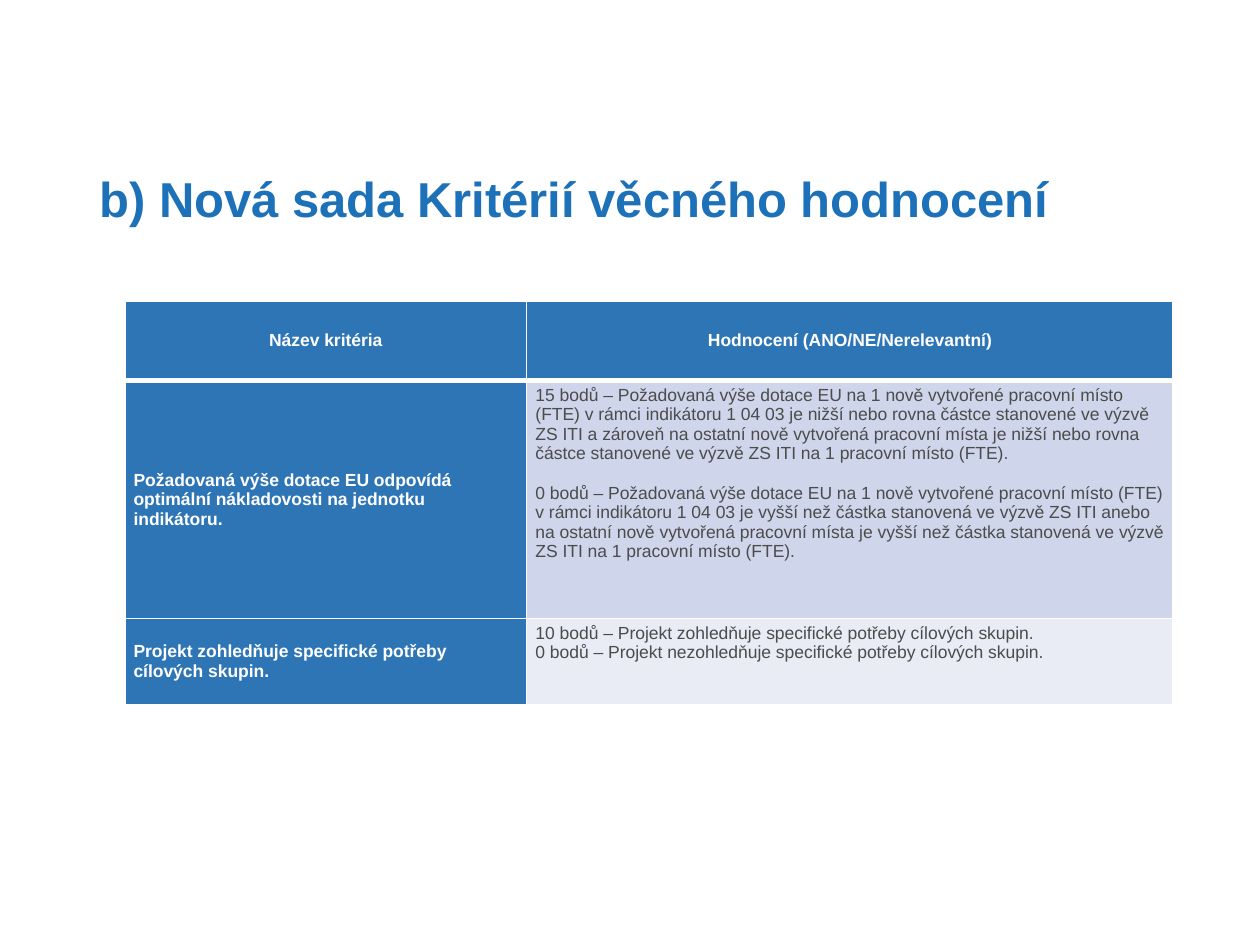
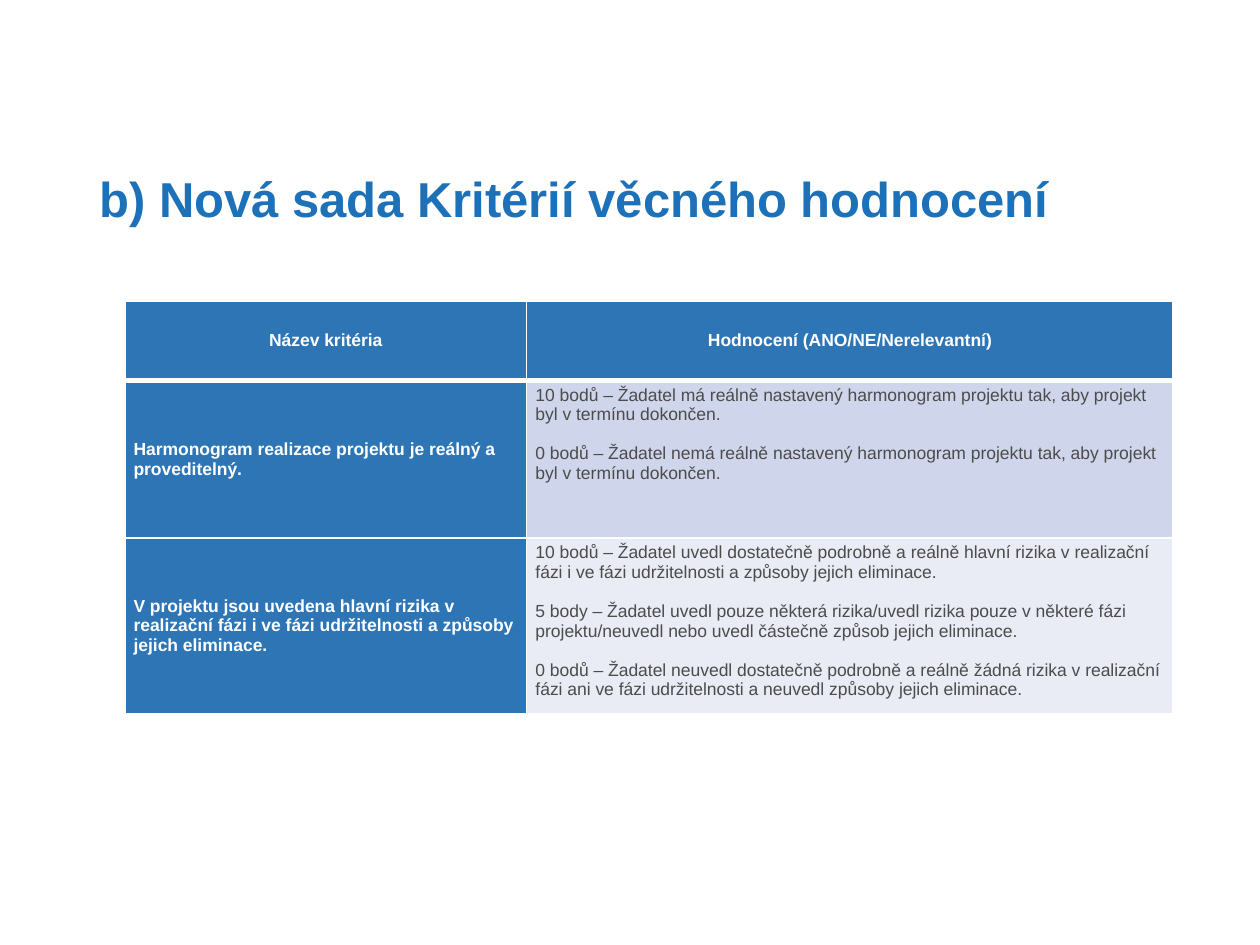
"""Builds two slides with tables of project evaluation criteria."""
from lxml import etree
from pptx import Presentation
from pptx.dml.color import RGBColor
from pptx.enum.text import MSO_ANCHOR, PP_ALIGN
from pptx.oxml.ns import qn
from pptx.util import Inches, Pt

MIDDLE, TOP = MSO_ANCHOR.MIDDLE, MSO_ANCHOR.TOP
CENTER, LEFT = PP_ALIGN.CENTER, PP_ALIGN.LEFT
FONT = "Arial"
COLORS = {"title": "1D71B8", "head": "2E75B6", "odd": "CFD5EA",
          "even": "E9EBF5", "text": "4C4C4C", "white": "FFFFFF"}
TITLE = "b) Nová sada Kritérií věcného hodnocení"
HEADS = ("Název kritéria", ["Hodnocení (ANO/NE/Nerelevantní)"])
WIDTHS = (3.19, 5.13)
GAP = 11.2

SLIDES = [
    [(0.63, 0, *HEADS),
     (1.89, GAP, "Požadovaná výše dotace EU odpovídá optimální nákladovosti na jednotku indikátoru.", [
         "15 bodů – Požadovaná výše dotace EU na 1 nově vytvořené pracovní místo (FTE) v rámci indikátoru 1 04 03 je nižší nebo rovna částce stanovené ve výzvě ZS ITI a zároveň na ostatní nově vytvořená pracovní místa je nižší nebo rovna částce stanovené ve výzvě ZS ITI na 1 pracovní místo (FTE).",
         "0 bodů – Požadovaná výše dotace EU na 1 nově vytvořené pracovní místo (FTE) v rámci indikátoru 1 04 03 je vyšší než částka stanovená ve výzvě ZS ITI anebo na ostatní nově vytvořená pracovní místa je vyšší než částka stanovená ve výzvě ZS ITI na 1 pracovní místo (FTE)."]),
     (0.68, 0, "Projekt zohledňuje specifické potřeby cílových skupin.", [
         "10 bodů – Projekt zohledňuje specifické potřeby cílových skupin.",
         "0 bodů – Projekt nezohledňuje specifické potřeby cílových skupin."])],
    [(0.63, 0, *HEADS),
     (1.25, GAP, "Harmonogram realizace projektu je reálný a proveditelný.", [
         "10 bodů – Žadatel má reálně nastavený harmonogram projektu tak, aby projekt byl v termínu dokončen.",
         "0 bodů – Žadatel nemá reálně nastavený harmonogram projektu tak, aby projekt byl v termínu dokončen."]),
     (1.32, GAP, "V projektu jsou uvedena hlavní rizika v realizační fázi i ve fázi udržitelnosti a způsoby jejich eliminace.", [
         "10 bodů – Žadatel uvedl dostatečně podrobně a reálně hlavní rizika v realizační fázi i ve fázi udržitelnosti a způsoby jejich eliminace.",
         "5 body – Žadatel uvedl pouze některá rizika/uvedl rizika pouze v některé fázi projektu/neuvedl nebo uvedl částečně způsob jejich eliminace.",
         "0 bodů – Žadatel neuvedl dostatečně podrobně a reálně žádná rizika v realizační fázi ani ve fázi udržitelnosti a neuvedl způsoby jejich eliminace."])],
]


def add_run(para, text, size, color, bold):
    run = para.add_run()
    run.text = text
    run.font.name = FONT
    run.font.size = Pt(size)
    run.font.bold = bold
    run.font.color.rgb = RGBColor.from_string(COLORS[color])


def add_edges(cell, row):
    props = cell._tc.get_or_add_tcPr()
    for side in ("L", "R", "T", "B"):
        thick = (row, side) in ((0, "B"), (1, "T"))
        line = etree.SubElement(props, qn(f"a:ln{side}"), w=str(Pt(3 if thick else 1)))
        fill = etree.SubElement(line, qn("a:solidFill"))
        etree.SubElement(fill, qn("a:srgbClr"), val=COLORS["white"])


prs = Presentation()
prs.slide_width, prs.slide_height = Inches(10), Inches(7.5)

for rows in SLIDES:
    slide = prs.slides.add_slide(prs.slide_layouts[6])
    box = slide.shapes.add_textbox(Inches(0.69), Inches(0.8), Inches(8.6), Inches(1.6))
    frame = box.text_frame
    frame.word_wrap = True
    frame.vertical_anchor = MIDDLE
    frame.paragraphs[0].line_spacing = 0.9
    add_run(frame.paragraphs[0], TITLE, 28, "title", True)

    high = sum(row[0] for row in rows)
    table = slide.shapes.add_table(len(rows), len(WIDTHS), Inches(0.99), Inches(2.39),
                                   Inches(sum(WIDTHS)), Inches(high)).table
    for col, width in zip(table.columns, WIDTHS):
        col.width = Inches(width)

    for r, (height, gap, name, marks) in enumerate(rows):
        table.rows[r].height = Inches(height)
        for c, lines in enumerate(([name], marks)):
            cell = table.cell(r, c)
            strong = r == 0 or c == 0
            add_edges(cell, r)
            shade = "head" if strong else "odd" if r % 2 else "even"
            cell.fill.solid()
            cell.fill.fore_color.rgb = RGBColor.from_string(COLORS[shade])
            cell.margin_left = cell.margin_right = Inches(0.07)
            cell.margin_top = cell.margin_bottom = Inches(0.04)
            cell.vertical_anchor = MIDDLE if strong else TOP
            for n, text in enumerate(lines):
                para = cell.text_frame.add_paragraph() if n else cell.text_frame.paragraphs[0]
                para.alignment = CENTER if r == 0 else LEFT
                if n:
                    para.space_before = Pt(gap)
                add_run(para, text, 10, "white" if strong else "text", strong)

prs.save("out.pptx")
